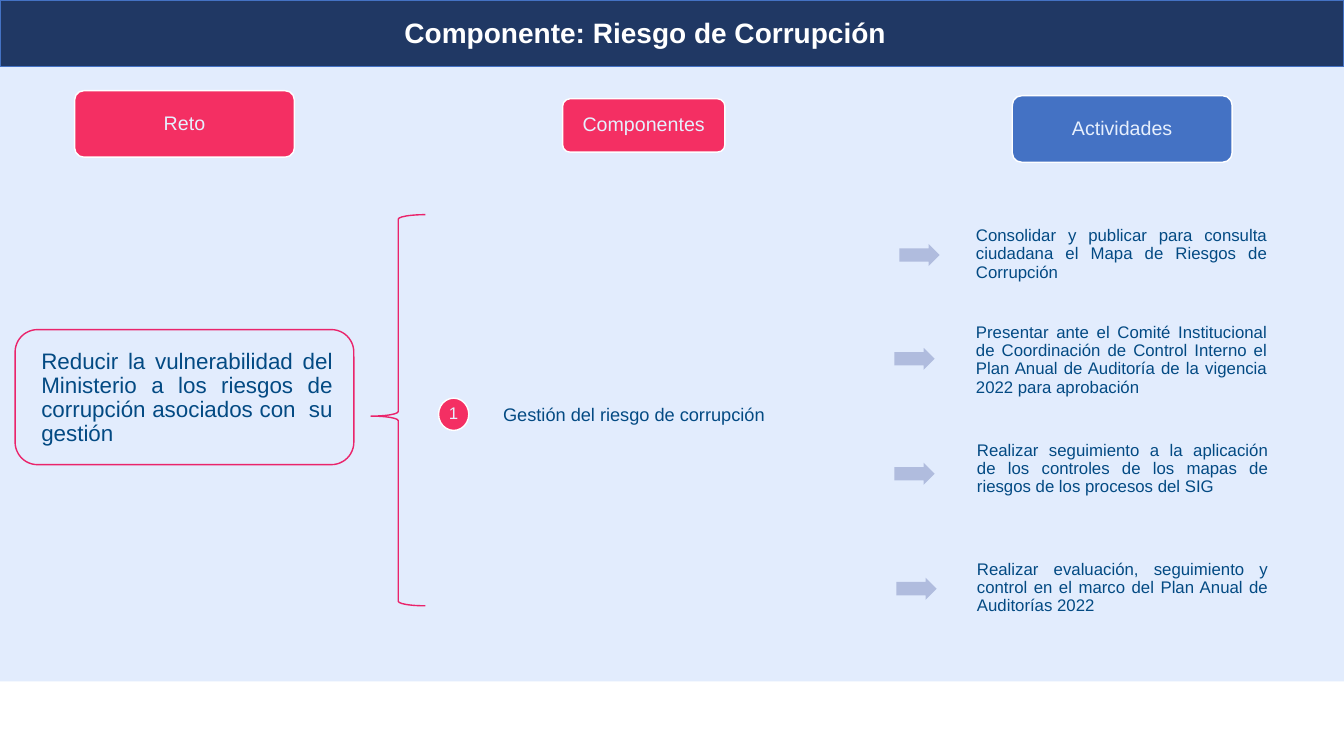
from lxml import etree
from pptx import Presentation
from pptx.dml.color import RGBColor
from pptx.enum.shapes import MSO_SHAPE as Shape
from pptx.enum.text import MSO_ANCHOR as Anchor, PP_ALIGN as Align
from pptx.util import Inches, Pt

NAVY, BLUE, PALE_BLUE = "203864", "4472C4", "E2ECFD"
RED, MAGENTA, LAVENDER = "F42F63", "EA246B", "B0BCDE"
WHITE, LABEL, INK = "FFFFFF", "E6EFFD", "034A83"

HEADINGS = [
    ("Reto", RED, (0.74, 0.9, 2.18, 0.66)),
    ("Componentes", RED, (5.58, 0.98, 1.61, 0.53)),
    ("Actividades", BLUE, (10.04, 0.95, 2.18, 0.66)),
]
# Text, text box and top-left corner of the arrow
ACTIVITIES = [
    ("Consolidar y publicar para consulta ciudadana el Mapa de Riesgos de Corrupción",
     (9.66, 1.94, 2.93, 1.17), (8.92, 2.42)),
    ("Presentar ante el Comité Institucional de Coordinación de Control Interno "
     "el Plan Anual de Auditoría de la vigencia 2022 para aprobación",
     (9.66, 2.75, 2.93, 1.65), (8.87, 3.45)),
    ("Realizar seguimiento a la aplicación de los controles de los mapas de riesgos "
     "de los procesos del SIG",
     (9.67, 4.07, 2.93, 1.17), (8.87, 4.59)),
    ("Realizar evaluación, seguimiento y control en el marco del Plan Anual de "
     "Auditorías 2022",
     (9.67, 5.25, 2.93, 1.17), (8.89, 5.73)),
]


def color(value):
    return RGBColor.from_string(value)


def add_shape(slide, kind, box, fill=None, line=None, adjustments=()):
    shape = slide.shapes.add_shape(kind, *map(Inches, box))
    shape.shadow.inherit = False
    if fill:
        shape.fill.solid()
        shape.fill.fore_color.rgb = color(fill)
    else:
        shape.fill.background()
    if line:
        shape.line.color.rgb = color(line)
        shape.line.width = Pt(1)
    else:
        shape.line.fill.background()
    for index, value in enumerate(adjustments):
        shape.adjustments[index] = value
    return shape


def write(shape, text, size=12, ink=INK, align=Align.JUSTIFY, bold=False, inset=0.02):
    frame = shape.text_frame
    frame.word_wrap = True
    frame.vertical_anchor = Anchor.MIDDLE
    frame.margin_left = frame.margin_right = Inches(inset)
    frame.margin_top = frame.margin_bottom = Inches(inset)
    paragraph = frame.paragraphs[0]
    paragraph.alignment = align
    paragraph.line_spacing = 0.9
    run = paragraph.add_run()
    run.text = text
    run.font.name = "Arial"
    run.font.size = Pt(size)
    run.font.bold = bold
    run.font.color.rgb = color(ink)


def add_text(slide, box, text, **style):
    write(slide.shapes.add_textbox(*map(Inches, box)), text, **style)


def add_title(slide, box):
    left, top, width, height = box
    add_shape(slide, Shape.RECTANGLE, box, NAVY, BLUE)
    add_text(slide, (left + 3.61, top + 0.16, 5.58, 0.36), "Componente: Riesgo de Corrupción",
             size=20, ink=WHITE, align=Align.CENTER, bold=True)


def add_heading(slide, box, text, fill):
    shape = add_shape(slide, Shape.ROUNDED_RECTANGLE, box, fill, WHITE, [0.14])
    write(shape, text, size=14, ink=LABEL, align=Align.CENTER, inset=0.06)


def add_challenge(slide, box):
    left, top, width, height = box
    add_shape(slide, Shape.ROUNDED_RECTANGLE, box, line=MAGENTA)
    add_text(slide, (left + 0.24, top + 0.02, 2.93, height - 0.02),
             "Reducir la vulnerabilidad del Ministerio a los riesgos de corrupción "
             "asociados con  su gestión", size=16)


def add_component(slide, box):
    """Brace, numbered marker and component name."""
    left, top, width, height = box
    add_shape(slide, Shape.LEFT_BRACE, (left, top, 0.54, height), line=MAGENTA,
              adjustments=[0.083, 0.515])
    marker = add_shape(slide, Shape.OVAL, (left + 0.67, top + 1.82, 0.3, 0.32), RED, WHITE)
    write(marker, "1", ink=LABEL, align=Align.CENTER, inset=0.06)
    add_text(slide, (left + 1.29, top + 1.7, width - 1.29, 0.59),
             "Gestión del riesgo de corrupción", size=13)


def add_activity(slide, box, text, arrow_corner):
    add_shape(slide, Shape.RIGHT_ARROW, (*arrow_corner, 0.4, 0.22), LAVENDER,
              adjustments=[0.6, 0.5])
    add_text(slide, box, text)


def main():
    presentation = Presentation()
    presentation.slide_width, presentation.slide_height = Inches(13.33), Inches(7.5)
    slide = presentation.slides.add_slide(presentation.slide_layouts[6])
    add_shape(slide, Shape.RECTANGLE, (0, 0, 13.33, 6.76), PALE_BLUE)
    add_title(slide, (0, 0, 13.33, 0.66))
    for text, fill, box in HEADINGS:
        add_heading(slide, box, text, fill)
    add_challenge(slide, (0.15, 3.27, 3.36, 1.34))
    add_component(slide, (3.68, 2.13, 4.31, 3.88))
    for text, box, arrow_corner in ACTIVITIES:
        add_activity(slide, box, text, arrow_corner)
    presentation.save("out.pptx")


if __name__ == "__main__":
    main()
